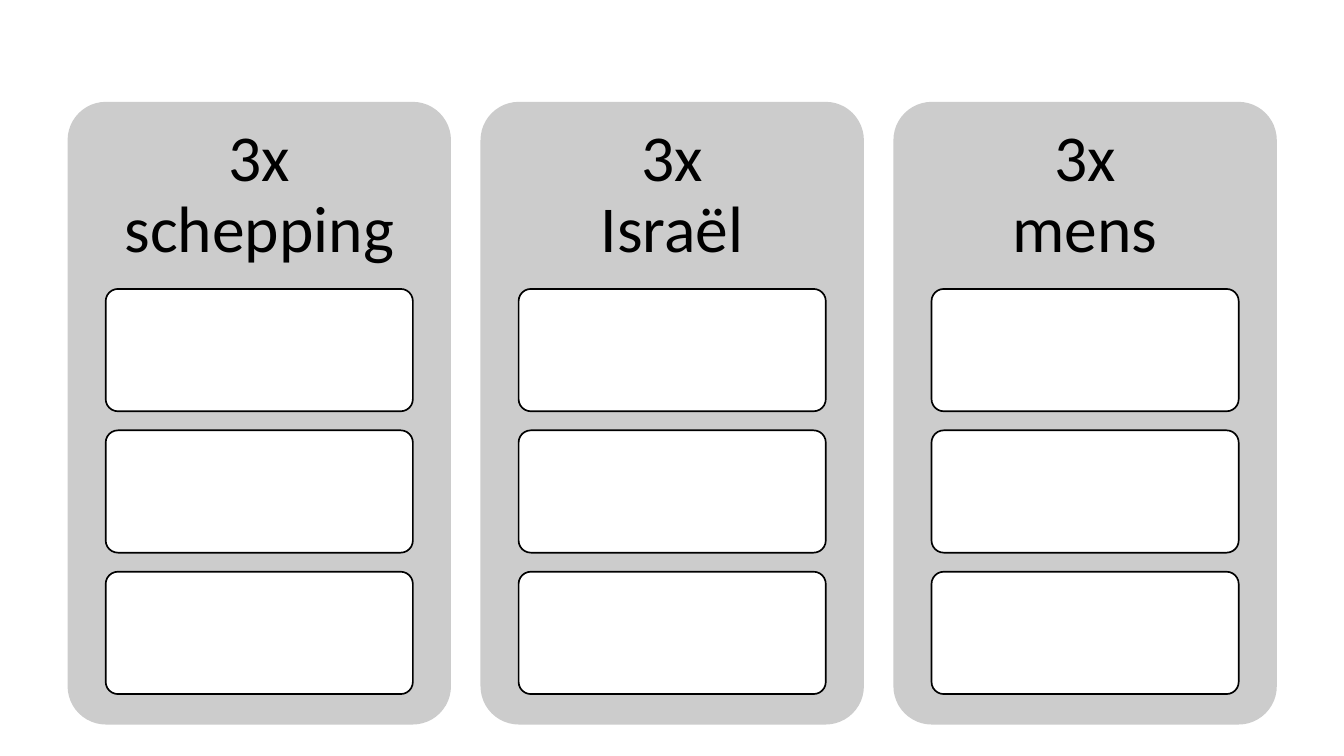
"""Build a slide with three titled columns of empty answer boxes."""
from dataclasses import dataclass

from pptx import Presentation
from pptx.dml.color import RGBColor
from pptx.enum.shapes import MSO_SHAPE
from pptx.enum.text import MSO_ANCHOR, PP_ALIGN
from pptx.shapes.autoshape import Shape
from pptx.slide import Slide
from pptx.util import Cm, Pt

ROUNDED = MSO_SHAPE.ROUNDED_RECTANGLE
MIDDLE = MSO_ANCHOR.MIDDLE
CENTER = PP_ALIGN.CENTER

GREY = RGBColor(0xCC, 0xCC, 0xCC)
WHITE = RGBColor(0xFF, 0xFF, 0xFF)
BLACK = RGBColor(0x00, 0x00, 0x00)

PANEL_LEFT, PANEL_TOP = 1.42, 2.14
PANEL_WIDTH, PANEL_HEIGHT = 8.05, 13.08
PANEL_PITCH = 8.67
TITLE_HEIGHT = 3.94
TITLE_INSET = 0.42
BOX_TOP = 6.07
BOX_WIDTH, BOX_HEIGHT = 6.45, 2.57
BOX_PITCH = 2.97
BOXES_PER_COLUMN = 3


@dataclass(frozen=True)
class Column:
    title_lines: tuple[str, ...]


@dataclass(frozen=True)
class Area:
    left: float
    top: float
    width: float
    height: float

    def lengths(self) -> tuple[Cm, Cm, Cm, Cm]:
        return Cm(self.left), Cm(self.top), Cm(self.width), Cm(self.height)


COLUMNS = (
    Column(("3x schepping",)),
    Column(("3x", "Israël")),
    Column(("3x", "mens")),
)


def add_rounded(slide: Slide, area: Area, fill: RGBColor) -> Shape:
    shape = slide.shapes.add_shape(ROUNDED, *area.lengths())
    shape.adjustments[0] = 0.1
    shape.shadow.inherit = False
    shape.fill.solid()
    shape.fill.fore_color.rgb = fill
    shape.line.fill.background()
    return shape


def add_answer_box(slide: Slide, area: Area) -> None:
    box = add_rounded(slide, area, WHITE)
    box.line.color.rgb = BLACK
    box.line.width = Pt(1)


def add_title(slide: Slide, area: Area, lines: tuple[str, ...]) -> None:
    frame = slide.shapes.add_textbox(*area.lengths()).text_frame
    frame.word_wrap = True
    frame.vertical_anchor = MIDDLE
    frame.margin_left = frame.margin_right = Cm(TITLE_INSET)
    frame.margin_top = frame.margin_bottom = Cm(TITLE_INSET)
    paragraph = frame.paragraphs[0]
    paragraph.alignment = CENTER
    paragraph.line_spacing = 0.9
    for index, line in enumerate(lines):
        if index:
            paragraph.add_line_break()
        run = paragraph.add_run()
        run.text = line
        run.font.name = "Calibri"
        run.font.size = Pt(39)
        run.font.color.rgb = BLACK


def add_column(slide: Slide, column: Column, left: float) -> None:
    add_rounded(slide, Area(left, PANEL_TOP, PANEL_WIDTH, PANEL_HEIGHT), GREY)
    add_title(slide, Area(left, PANEL_TOP, PANEL_WIDTH, TITLE_HEIGHT), column.title_lines)
    box_left = left + (PANEL_WIDTH - BOX_WIDTH) / 2
    for row in range(BOXES_PER_COLUMN):
        top = BOX_TOP + row * BOX_PITCH
        add_answer_box(slide, Area(box_left, top, BOX_WIDTH, BOX_HEIGHT))


def main() -> None:
    presentation = Presentation()
    presentation.slide_width = Cm(28.22)
    presentation.slide_height = Cm(15.88)
    slide = presentation.slides.add_slide(presentation.slide_layouts[6])
    for index, column in enumerate(COLUMNS):
        add_column(slide, column, PANEL_LEFT + index * PANEL_PITCH)
    presentation.save("out.pptx")


if __name__ == "__main__":
    main()
